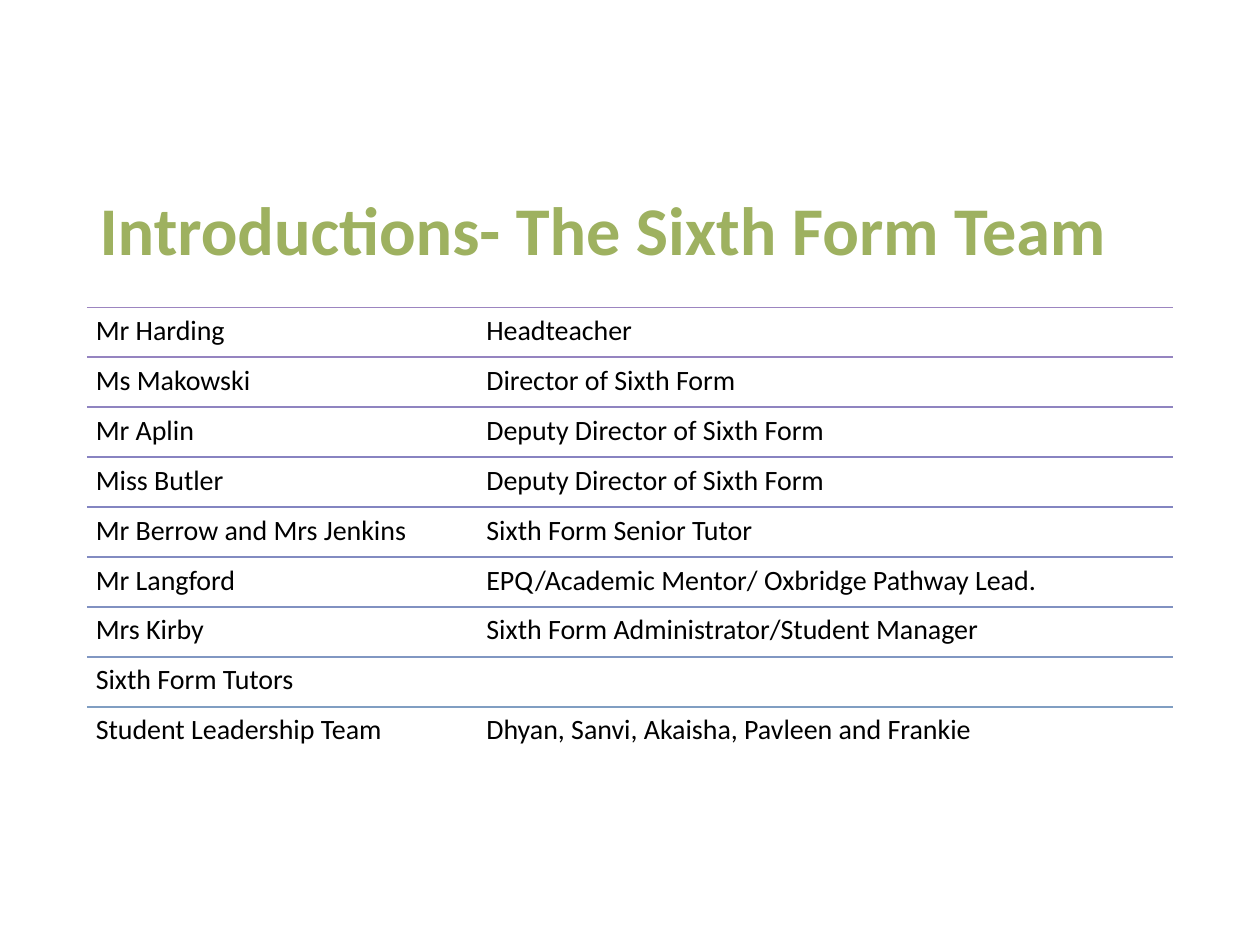
import dataclasses

import pptx
import pptx.dml.color
import pptx.enum.shapes
import pptx.enum.text
import pptx.oxml.ns
import pptx.util
from lxml import etree

Inches = pptx.util.Inches


@dataclasses.dataclass(frozen=True)
class Theme:
    font: str = "Calibri"
    title_size: int = 39
    row_size: int = 16
    title: str = "9EB160"
    text: str = "000000"
    rules: tuple = ("9C85C0", "9584C0", "8F84C0", "8883C1", "8385C1",
                    "828BC1", "8191C1", "8197C2", "809EC2")


THEME = Theme()
LEFT, WIDTH = 0.69, 8.62
FIRST_TOP, LAST_TOP = 2.44, 5.61
ROLE_TAB = 3.1
ROW_INSET = 0.07

TEAM = [
    ("Mr Harding", "Headteacher"),
    ("Ms Makowski", "Director of Sixth Form"),
    ("Mr Aplin", "Deputy Director of Sixth Form"),
    ("Miss Butler", "Deputy Director of Sixth Form"),
    ("Mr Berrow and Mrs Jenkins", "Sixth Form Senior Tutor"),
    ("Mr Langford", "EPQ/Academic Mentor/ Oxbridge Pathway Lead."),
    ("Mrs Kirby", "Sixth Form Administrator/Student Manager"),
    ("Sixth Form Tutors", ""),
    ("Student Leadership Team", "Dhyan, Sanvi, Akaisha, Pavleen and Frankie"),
]


def rgb(color):
    return pptx.dml.color.RGBColor.from_string(color)


def write(frame, text, *, size, color, bold=False, tab=None, inset=None,
          anchor=pptx.enum.text.MSO_ANCHOR.TOP):
    frame.word_wrap = True
    frame.auto_size = pptx.enum.text.MSO_AUTO_SIZE.NONE
    frame.vertical_anchor = anchor
    if inset is not None:
        frame.margin_left = frame.margin_right = Inches(inset)
        frame.margin_top = frame.margin_bottom = Inches(inset)
    paragraph = frame.paragraphs[0]
    paragraph.alignment = pptx.enum.text.PP_ALIGN.LEFT
    paragraph.line_spacing = 0.9
    if tab is not None:
        qn = pptx.oxml.ns.qn
        stops = etree.SubElement(paragraph._p.get_or_add_pPr(), qn("a:tabLst"))
        etree.SubElement(stops, qn("a:tab"), pos=str(Inches(tab)), algn="l")
    run = paragraph.add_run()
    run.text = text
    run.font.name = THEME.font
    run.font.size = pptx.util.Pt(size)
    run.font.bold = bold
    run.font.color.rgb = rgb(color)


def add_title(slide, text):
    title = slide.shapes.title
    title.left, title.top = Inches(LEFT), Inches(1.39)
    title.width, title.height = Inches(WIDTH), Inches(0.93)
    write(title.text_frame, text, size=THEME.title_size, color=THEME.title,
          bold=True, anchor=pptx.enum.text.MSO_ANCHOR.MIDDLE)


def add_rule(shapes, top, color):
    rule = shapes.add_connector(
        pptx.enum.shapes.MSO_CONNECTOR.STRAIGHT,
        Inches(LEFT), Inches(top), Inches(LEFT + WIDTH), Inches(top))
    rule.line.color.rgb = rgb(color)
    rule.line.width = pptx.util.Pt(1)
    etree.SubElement(rule._element.spPr, pptx.oxml.ns.qn("a:effectLst"))


def add_member(shapes, top, height, name, role):
    member = shapes.add_textbox(
        Inches(LEFT), Inches(top), Inches(WIDTH), Inches(height))
    write(member.text_frame, f"{name}\t{role}" if role else name,
          size=THEME.row_size, color=THEME.text, tab=ROLE_TAB, inset=ROW_INSET)


def add_team(slide):
    shapes = slide.shapes.add_group_shape().shapes
    pitch = (LAST_TOP - FIRST_TOP) / (len(TEAM) - 1)
    for index, ((name, role), color) in enumerate(zip(TEAM, THEME.rules)):
        top = FIRST_TOP + index * pitch
        add_rule(shapes, top, color)
        add_member(shapes, top, pitch, name, role)


def main():
    deck = pptx.Presentation()
    deck.slide_width, deck.slide_height = Inches(10), Inches(7.5)
    slide = deck.slides.add_slide(deck.slide_layouts.get_by_name("Title Only"))
    add_title(slide, "Introductions- The Sixth Form Team")
    add_team(slide)
    deck.save("out.pptx")


if __name__ == "__main__":
    main()
